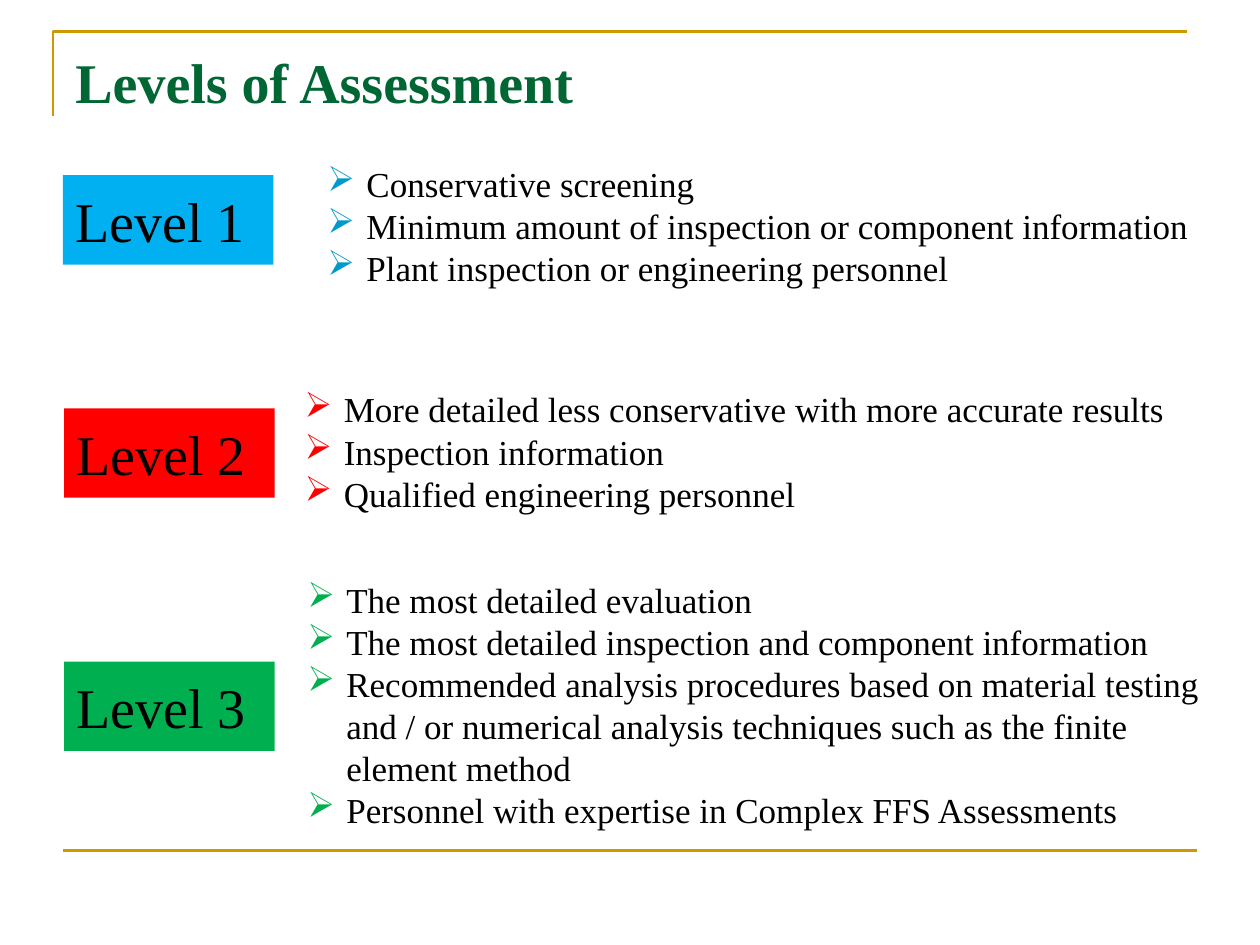
from lxml.etree import SubElement
from pptx import Presentation
from pptx.dml.color import RGBColor
from pptx.enum.shapes import MSO_CONNECTOR, MSO_SHAPE
from pptx.enum.text import MSO_ANCHOR, PP_ALIGN
from pptx.oxml.ns import qn
from pptx.util import Inches, Pt

FONT = "Times New Roman"
GOLD = RGBColor(0xCC, 0x99, 0x00)
DARK_GREEN = RGBColor(0x00, 0x66, 0x33)
BLACK = RGBColor(0x00, 0x00, 0x00)
SKY = RGBColor(0x00, 0xB0, 0xF0)
BLUE = RGBColor(0x00, 0x99, 0xCC)
RED = RGBColor(0xFF, 0x00, 0x00)
GREEN = RGBColor(0x00, 0xB0, 0x50)

LEVELS = [
    ("Level 1", SKY, (0.5, 1.39), BLUE, (2.5, 1.24, 7.15, 1.11), [
        "Conservative screening",
        "Minimum amount of inspection or component information",
        "Plant inspection or engineering personnel",
    ]),
    ("Level 2", RED, (0.51, 3.24), RED, (2.32, 3.03, 7.18, 1.11), [
        "More detailed less conservative with more accurate results",
        "Inspection information",
        "Qualified engineering personnel",
    ]),
    ("Level 3", GREEN, (0.51, 5.25), GREEN, (2.34, 4.54, 7.31, 2.12), [
        "The most detailed evaluation",
        "The most detailed inspection and component information",
        "Recommended analysis procedures based on material testing and / or "
        "numerical analysis techniques such as the finite element method",
        "Personnel with expertise in Complex FFS Assessments",
    ]),
]


def write_text(paragraph, text, size=32, color=BLACK, bold=False):
    paragraph.alignment = PP_ALIGN.LEFT
    span = paragraph.add_run()
    span.text = text
    span.font.name = FONT
    span.font.size = Pt(size)
    span.font.bold = bold
    span.font.color.rgb = color


def set_bullet(paragraph, color):
    properties = paragraph._p.get_or_add_pPr()
    properties.set("marL", str(Inches(0.31)))
    properties.set("indent", str(Inches(-0.31)))
    bullet_color = SubElement(properties, qn("a:buClr"))
    SubElement(bullet_color, qn("a:srgbClr"), val=str(color))
    SubElement(properties, qn("a:buChar"), char="➢")


def style_line(shape):
    shape.line.color.rgb = GOLD
    shape.line.width = Pt(1.5)


def add_frame(page):
    builder = page.shapes.build_freeform(Inches(0.42), Inches(0.92))
    corner = [(Inches(0.42), Inches(0.25)), (Inches(9.42), Inches(0.25))]
    builder.add_line_segments(corner, close=False)
    bracket = builder.convert_to_shape()
    bracket.shadow.inherit = False
    bracket.fill.background()
    style_line(bracket)

    rule = page.shapes.add_connector(
        MSO_CONNECTOR.STRAIGHT, Inches(0.5), Inches(6.75), Inches(9.5), Inches(6.75))
    SubElement(rule._element.spPr, qn("a:effectLst"))
    style_line(rule)
    rule_properties = rule._element.spPr
    rule_properties.append(rule_properties.find(qn("a:effectLst")))


def add_title(page, text):
    box = page.shapes.add_textbox(Inches(0.5), Inches(0.3), Inches(9), Inches(0.69))
    frame = box.text_frame
    frame.word_wrap = True
    frame.vertical_anchor = MSO_ANCHOR.MIDDLE
    write_text(frame.paragraphs[0], text, color=DARK_GREEN, bold=True)


def add_label(page, text, fill, position):
    left, top = position
    label = page.shapes.add_shape(
        MSO_SHAPE.RECTANGLE, Inches(left), Inches(top), Inches(1.67), Inches(0.71))
    label.shadow.inherit = False
    label.fill.solid()
    label.fill.fore_color.rgb = fill
    label.line.fill.background()
    label.text_frame.vertical_anchor = MSO_ANCHOR.MIDDLE
    write_text(label.text_frame.paragraphs[0], text)


def add_bullets(page, items, color, area):
    box = page.shapes.add_textbox(*map(Inches, area))
    frame = box.text_frame
    frame.word_wrap = True
    for index, item in enumerate(items):
        paragraph = frame.add_paragraph() if index else frame.paragraphs[0]
        paragraph.line_spacing = Pt(24)
        write_text(paragraph, item, size=20)
        set_bullet(paragraph, color)


def main():
    deck = Presentation()
    deck.slide_width, deck.slide_height = Inches(10), Inches(7.5)
    page = deck.slides.add_slide(deck.slide_layouts[6])
    add_frame(page)
    add_title(page, "Levels of Assessment")
    for name, fill, position, bullet_color, area, items in LEVELS:
        add_label(page, name, fill, position)
        add_bullets(page, items, bullet_color, area)
    deck.save("out.pptx")


if __name__ == "__main__":
    main()
